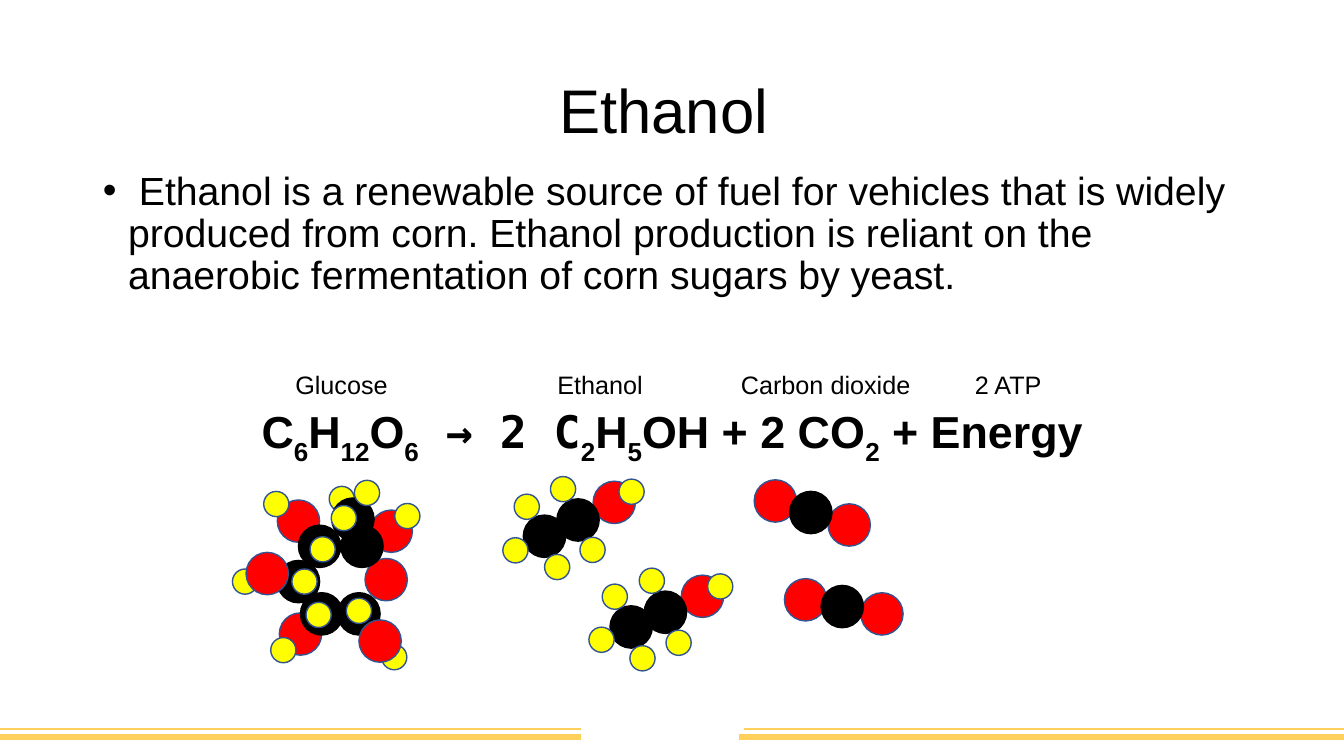
from dataclasses import dataclass
from math import cos, radians, sin

from lxml.etree import SubElement
from pptx import Presentation
from pptx.dml.color import RGBColor
from pptx.enum.shapes import MSO_CONNECTOR, MSO_SHAPE
from pptx.enum.text import MSO_ANCHOR, MSO_AUTO_SIZE, PP_ALIGN
from pptx.oxml.ns import qn
from pptx.util import Inches, Pt


@dataclass(frozen=True)
class Theme:
    font: str = "Arial"
    mono: str = "DejaVu Sans Mono"
    ink: str = "000000"
    outline: str = "325491"
    oxygen: str = "FF0000"
    hydrogen: str = "FFFF00"
    band: str = "FFD05B"
    title: int = 44
    body: int = 28
    equation: int = 32
    label: int = 18
    tail: int = 14


THEME = Theme()
ATOMS = {
    "C": (0.42, THEME.ink, THEME.ink),
    "O": (0.42, THEME.oxygen, THEME.outline),
    "H": (0.25, THEME.hydrogen, THEME.outline),
}
CARBON_DIOXIDE = [("O", 0, 0), ("O", 0.77, 0), ("C", 0.37, 0)]
ETHANOL = [
    ("C", 0, 0), ("O", 0.77, 0), ("C", 0.37, 0),
    ("H", 0.97, -0.02), ("H", 0.37, 0.33), ("H", -0.02, 0.33),
    ("H", -0.32, 0), ("H", -0.03, -0.34), ("H", 0.37, -0.34),
]
GLUCOSE = [
    ("O", 0.58, -0.33), ("O", -0.34, -0.43), ("O", -0.32, 0.69),
    ("C", -0.11, 0.49), ("O", 0.53, 0.15), ("C", 0.26, 0.49),
    ("H", -0.49, 0.85), ("H", 0.61, 0.92), ("H", -0.14, 0.5),
    ("H", -0.87, 0.17), ("H", -0.56, -0.6), ("H", 0.74, -0.48),
    ("C", -0.34, 0.17), ("C", -0.13, -0.18), ("C", 0.29, -0.18),
    ("O", -0.65, 0.09), ("H", -0.28, 0.17), ("H", 0.09, -0.65),
    ("H", -0.1, -0.15), ("H", 0.26, 0.46), ("O", 0.47, 0.76),
    ("C", 0.2, -0.45), ("H", 0.11, -0.46), ("H", 0.34, -0.71),
]
MOLECULES = [
    (CARBON_DIOXIDE, 7.69, 4.97, 18),
    (CARBON_DIOXIDE, 7.99, 5.95, 10.5),
    (ETHANOL, 5.4, 5.32, -25.9),
    (ETHANOL, 6.26, 6.22, -23.3),
    (GLUCOSE, 3.3, 5.6, 0),
]
LABELS = [
    ("Glucose", 2.83, 1.42),
    ("Ethanol", 5.43, 1.26),
    ("Carbon dioxide", 7.25, 2.57),
    ("2 ATP", 9.57, 0.9),
]
EQUATION = [
    ("C", {}), ("6", {"subscript": True}),
    ("H", {}), ("12", {"subscript": True}),
    ("O", {}), ("6", {"subscript": True}),
    (" → 2 C", {"font": THEME.mono}), ("2", {"subscript": True}),
    ("H", {}), ("5", {"subscript": True}),
    ("OH + 2 CO", {}), ("2", {"subscript": True}),
    (" + Energy", {}), (" ", {"size": THEME.tail}),
]
BANDS = [
    (7.33, 13.33, 7.31, 4.5),
    (0, 5.76, 7.31, 4.5),
    (0, 5.76, 7.23, 1.5),
    (7.38, 13.33, 7.23, 1.5),
]


def add_text(paragraph, text, size, font=THEME.font, bold=False, subscript=False):
    run = paragraph.add_run()
    run.text = text
    run.font.size = Pt(size)
    run.font.name = font
    run.font.bold = bold
    run.font.color.rgb = RGBColor.from_string(THEME.ink)
    if subscript:
        run._r.get_or_add_rPr().set("baseline", "-30000")


def place(box, left, top, width, height):
    box.left, box.top = Inches(left), Inches(top)
    box.width, box.height = Inches(width), Inches(height)


def fill_title(title):
    place(title, 0.92, 0.4, 11.5, 1.45)
    title.text_frame.vertical_anchor = MSO_ANCHOR.MIDDLE
    title.text_frame.auto_size = MSO_AUTO_SIZE.NONE
    heading = title.text_frame.paragraphs[0]
    heading.alignment = PP_ALIGN.CENTER
    heading.line_spacing = 0.9
    add_text(heading, "Ethanol ", THEME.title)


def fill_body(body):
    place(body, 0.92, 1.65, 11.5, 5.11)
    body.text_frame.auto_size = MSO_AUTO_SIZE.NONE
    summary = body.text_frame.paragraphs[0]
    summary.line_spacing = 0.9
    summary.space_before = Pt(0)
    properties = summary._p.get_or_add_pPr()
    properties.set("marL", str(Inches(0.25)))
    properties.set("indent", str(Inches(-0.25)))
    SubElement(properties, qn("a:buFont"), typeface=THEME.font)
    SubElement(properties, qn("a:buChar"), char="•")
    add_text(
        summary,
        " Ethanol is a renewable source of fuel for vehicles that is widely "
        "produced from corn. Ethanol production is reliant on the "
        "anaerobic fermentation of corn sugars by yeast.",
        THEME.body,
    )


def add_line_of_text(slide, left, top, width, height, alignment=PP_ALIGN.LEFT):
    box = slide.shapes.add_textbox(
        Inches(left), Inches(top), Inches(width), Inches(height))
    box.text_frame.word_wrap = True
    box.text_frame.vertical_anchor = MSO_ANCHOR.MIDDLE
    paragraph = box.text_frame.paragraphs[0]
    paragraph.alignment = alignment
    return paragraph


def add_equation(slide):
    equation = add_line_of_text(slide, 2.43, 3.98, 8.53, 0.67, PP_ALIGN.CENTER)
    for text, changes in EQUATION:
        add_text(equation, text, **{"size": THEME.equation, "bold": True, **changes})


def add_band(slide, start, end, height, weight):
    band = slide.shapes.add_connector(
        MSO_CONNECTOR.STRAIGHT,
        Inches(start), Inches(height), Inches(end), Inches(height))
    band.line.color.rgb = RGBColor.from_string(THEME.band)
    band.line.width = Pt(weight)
    SubElement(band._element.spPr, qn("a:effectLst"))


def add_atom(molecule, element, x, y):
    diameter, fill, outline = ATOMS[element]
    atom = molecule.shapes.add_shape(
        MSO_SHAPE.OVAL, Inches(x - diameter / 2), Inches(y - diameter / 2),
        Inches(diameter), Inches(diameter))
    atom.shadow.inherit = False
    atom.fill.solid()
    atom.fill.fore_color.rgb = RGBColor.from_string(fill)
    atom.line.color.rgb = RGBColor.from_string(outline)
    atom.line.width = Pt(1)


def add_molecule(slide, atoms, left, top, angle):
    molecule = slide.shapes.add_group_shape()
    across, down = cos(radians(angle)), sin(radians(angle))
    for element, x, y in atoms:
        add_atom(molecule, element,
                 left + x * across - y * down, top + x * down + y * across)


def main():
    deck = Presentation()
    deck.slide_width, deck.slide_height = Inches(13.33), Inches(7.5)
    slide = deck.slides.add_slide(deck.slide_layouts[1])
    fill_title(slide.shapes.title)
    fill_body(slide.placeholders[1])
    for band in BANDS:
        add_band(slide, *band)
    for name, left, width in LABELS:
        add_text(add_line_of_text(slide, left, 3.61, width, 0.4), name, THEME.label)
    add_equation(slide)
    for molecule in MOLECULES:
        add_molecule(slide, *molecule)
    deck.save("out.pptx")


if __name__ == "__main__":
    main()
